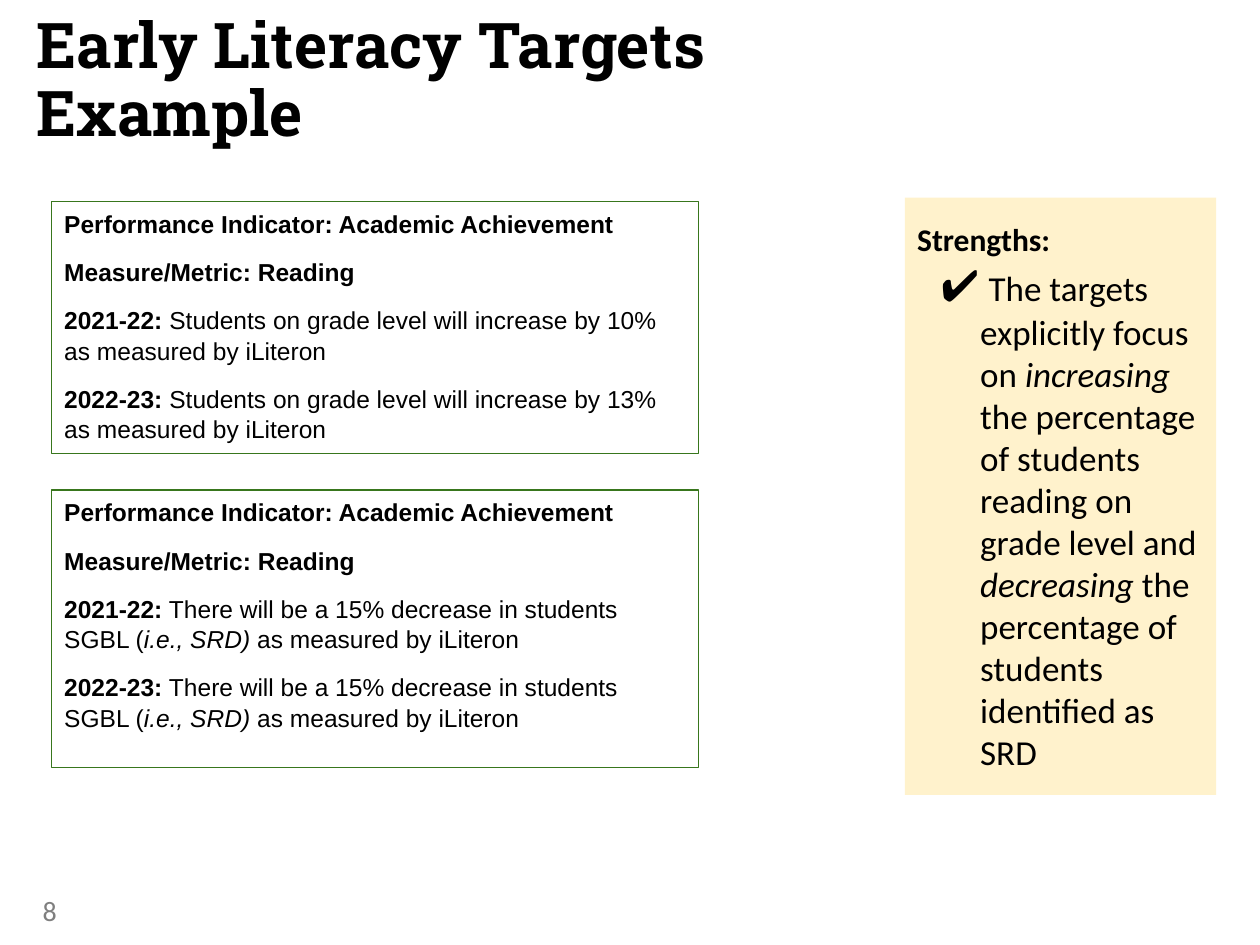
from pptx import Presentation
from pptx.dml.color import RGBColor
from pptx.enum.shapes import MSO_SHAPE
from pptx.enum.text import MSO_ANCHOR, MSO_AUTO_SIZE, PP_ALIGN
from pptx.oxml.xmlchemy import OxmlElement
from pptx.util import Pt

# Content: each paragraph is a list of (text, style); b = bold, i = italic
TITLE = "Early Literacy Targets Example"
PAGE_NUMBER = "8"
HEADINGS = ["Performance Indicator: Academic Achievement", "Measure/Metric: Reading"]
INCREASE_TARGETS = [
    [(f"{year}:", "b"),
     (f" Students on grade level will increase by {gain} as measured by iLiteron", "")]
    for year, gain in [("2021-22", "10%"), ("2022-23", "13%")]
]
DECREASE_TARGETS = [
    [(f"{year}:", "b"), (" There will be a 15% decrease in students SGBL (", ""),
     ("i.e., SRD)", "i"), (" as measured by iLiteron", "")]
    for year in ["2021-22", "2022-23"]
]
STRENGTHS_HEADING = [("Strengths:", "b")]
STRENGTHS_POINT = [
    ("✔ ", "b"),
    ("The targets explicitly focus on ", ""), ("increasing", "i"),
    (" the percentage of students reading on grade level and ", ""),
    ("decreasing", "i"), (" the percentage of students identified as SRD", ""),
]

THEME = {
    "title_font": "Roboto Slab", "target_font": "Arial", "side_font": "Calibri",
    "title": 36, "target": 14, "heading": 18, "point": 20, "check": 25, "page": 16,
    "ink": RGBColor(0, 0, 0), "grey": RGBColor(0x7F, 0x7F, 0x7F),
    "green": RGBColor(0x38, 0x76, 0x1D), "cream": RGBColor(0xFF, 0xF2, 0xCC),
}

# Layout in points
TARGET_LEFT, TARGET_WIDTH = 29.5, 369.5
TARGET_BOXES = [(115.2, 144, INCREASE_TARGETS), (280, 158.4, DECREASE_TARGETS)]


def place(shape, left, top, width, height):
    shape.left, shape.top = Pt(left), Pt(top)
    shape.width, shape.height = Pt(width), Pt(height)


def set_frame(frame, side, edge, anchor):
    frame.word_wrap = True
    frame.auto_size = MSO_AUTO_SIZE.NONE
    frame.vertical_anchor = anchor
    frame.margin_left = frame.margin_right = Pt(side)
    frame.margin_top = frame.margin_bottom = Pt(edge)


def set_indent(paragraph, left, first):
    properties = paragraph._p.get_or_add_pPr()
    properties.set("marL", str(Pt(left)))
    properties.set("indent", str(Pt(first)))
    properties.append(OxmlElement("a:buNone"))


def write(paragraph, pieces, font, size, color=THEME["ink"]):
    paragraph.alignment = PP_ALIGN.LEFT
    for text, style in pieces:
        run = paragraph.add_run()
        run.text = text
        run.font.name, run.font.size = font, Pt(size)
        run.font.bold, run.font.italic = "b" in style, "i" in style
        run.font.color.rgb = color


def next_paragraph(frame, index):
    return frame.paragraphs[0] if index == 0 else frame.add_paragraph()


presentation = Presentation()
presentation.slide_width, presentation.slide_height = Pt(720), Pt(540)
slide = presentation.slides.add_slide(presentation.slide_layouts[3])
title, *target_bodies = slide.placeholders

# Title
place(title, 21, 8, 479, 60)
set_frame(title.text_frame, 0, 0, MSO_ANCHOR.TOP)
title_line = title.text_frame.paragraphs[0]
title_line.line_spacing = 0.9
write(title_line, [(TITLE, "b")], THEME["title_font"], THEME["title"])

# Target boxes
for body, (top, height, targets) in zip(target_bodies, TARGET_BOXES):
    place(body, TARGET_LEFT, top, TARGET_WIDTH, height)
    body.line.color.rgb = THEME["green"]
    body.line.width = Pt(0.75)
    set_frame(body.text_frame, 7.2, 3.6, MSO_ANCHOR.TOP)
    paragraphs = [[(heading, "b")] for heading in HEADINGS] + targets
    for index, pieces in enumerate(paragraphs):
        paragraph = next_paragraph(body.text_frame, index)
        set_indent(paragraph, 0, 0)
        paragraph.space_before = Pt(10 if index else 0)
        paragraph.line_spacing = 1.04
        write(paragraph, pieces, THEME["target_font"], THEME["target"])

# Strengths panel
panel = slide.shapes.add_shape(
    MSO_SHAPE.RECTANGLE, Pt(517), Pt(113), Pt(178), Pt(341.3))
panel.shadow.inherit = False
panel.fill.solid()
panel.fill.fore_color.rgb = THEME["cream"]
panel.line.fill.background()
set_frame(panel.text_frame, 7.2, 7.2, MSO_ANCHOR.MIDDLE)
write(panel.text_frame.paragraphs[0], STRENGTHS_HEADING,
      THEME["side_font"], THEME["heading"])
point = panel.text_frame.add_paragraph()
set_indent(point, 36, -22.5)
write(point, STRENGTHS_POINT, THEME["side_font"], THEME["point"])
point.runs[0].font.size = Pt(THEME["check"])

# Page number
page = slide.shapes.add_textbox(Pt(17.3), Pt(506), Pt(162), Pt(28.8))
set_frame(page.text_frame, 7.2, 3.6, MSO_ANCHOR.MIDDLE)
write(page.text_frame.paragraphs[0], [(PAGE_NUMBER, "")],
      THEME["side_font"], THEME["page"], THEME["grey"])

presentation.save("out.pptx")
